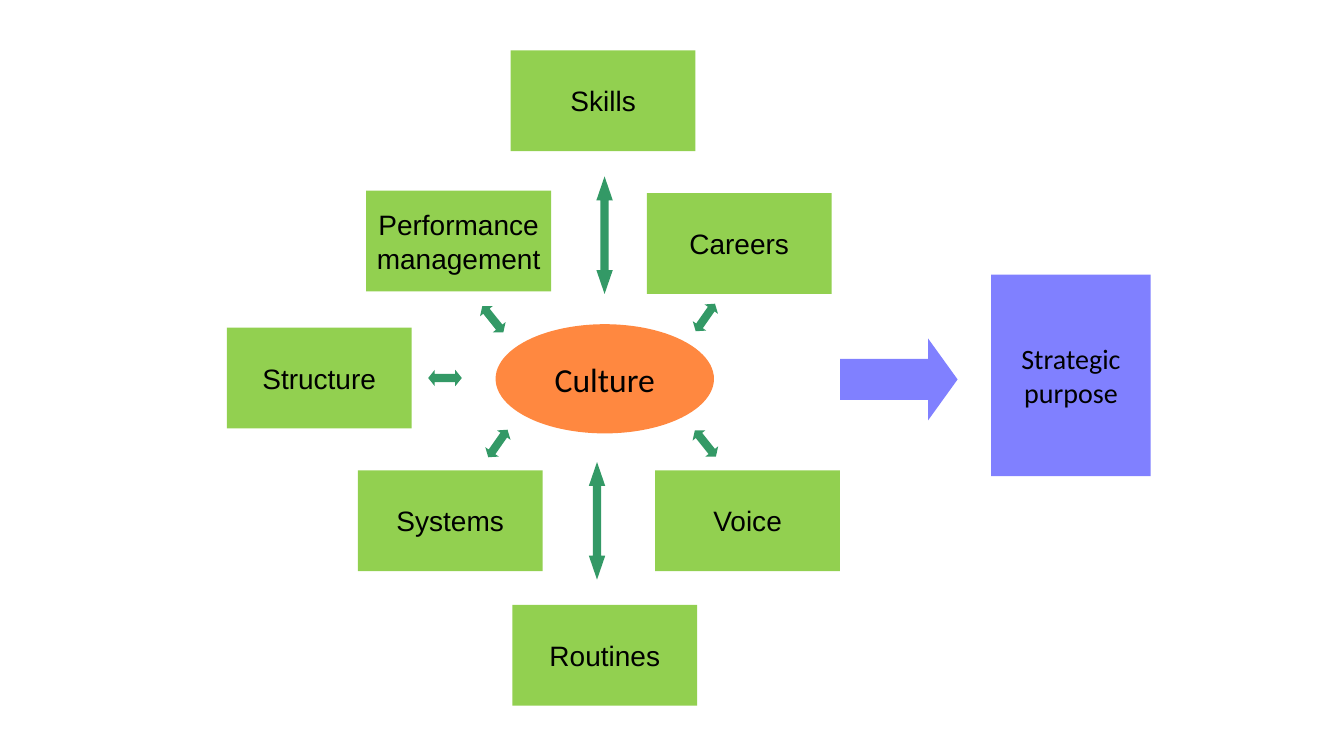
from lxml.etree import SubElement
from pptx import Presentation
from pptx.dml.color import RGBColor
from pptx.enum.shapes import MSO_SHAPE
from pptx.enum.text import MSO_ANCHOR, PP_ALIGN
from pptx.oxml.ns import qn
from pptx.util import Inches, Pt

COLUMNS, ROWS = 160, 90
CELL = Inches(1 / 12)
COLORS = {
    "factor": "92D050",
    "culture": "FF8840",
    "purpose": "8080FF",
    "link": "339966",
    "text": "000000",
}
FACTOR_SIZE = (22, 12)
FACTORS = [
    ("Skills", 60.8, 6),
    ("Careers", 77, 23),
    ("Voice", 78, 56),
    ("Routines", 61, 72),
    ("Systems", 42.6, 56),
    ("Structure", 27, 39),
    ("Performance management", 43.6, 22.7),
]
SHORT_LINKS = [
    (83, 35.8, 35),
    (83, 50.8, 321.2),
    (58.3, 50.8, 35),
    (52, 43, 270),
    (57.7, 36, 321.2),
]
LONG_LINKS = [(71, 21), (70.1, 55)]


def add_figure(shapes, kind, column, row, size, color):
    """Add a flat preset shape placed in grid cells."""
    places = [int(value * CELL) for value in (column, row, *size)]
    figure = shapes.add_shape(kind, *places)
    figure.shadow.inherit = False
    figure.fill.solid()
    figure.fill.fore_color.rgb = RGBColor.from_string(COLORS[color])
    figure.line.fill.background()
    return figure


def add_label(figure, text, font="Arial", size=20, wrap=True):
    """Write centred text in a shape."""
    frame = figure.text_frame
    frame.word_wrap = wrap
    frame.vertical_anchor = MSO_ANCHOR.MIDDLE
    para = frame.paragraphs[0]
    para.alignment = PP_ALIGN.CENTER
    span = para.add_run()
    span.text = text
    span.font.name = font
    span.font.size = Pt(size)
    span.font.color.rgb = RGBColor.from_string(COLORS["text"])


def set_arrow_form(arrow, shaft, head):
    """Set shaft width and head length as shares of the arrow's width."""
    guides = arrow.element.spPr.find(qn("a:prstGeom")).find(qn("a:avLst"))
    guides.clear()
    for name, share in (("adj1", shaft), ("adj2", head)):
        formula = f"val {round(share * 100000)}"
        SubElement(guides, qn("a:gd"), name=name, fmla=formula)


def add_factor(page, text, column, row):
    """Add one of the boxes around the culture."""
    box = add_figure(page.shapes, MSO_SHAPE.RECTANGLE, column, row, FACTOR_SIZE, "factor")
    add_label(box, text)


def add_link(page, column, row, length, head, angle=0):
    """Add a double-headed arrow between the culture and a factor."""
    link = add_figure(page.shapes, MSO_SHAPE.UP_DOWN_ARROW, column, row, (1.95, length), "link")
    set_arrow_form(link, 0.5, head)
    link.rotation = angle


def add_culture(page):
    """Add the ellipse in the middle."""
    culture = add_figure(page.shapes, MSO_SHAPE.OVAL, 59, 38.6, (26, 13), "culture")
    add_label(culture, "Culture", "Calibri", 24, wrap=False)


def add_purpose(page):
    """Add the grouped result box and the arrow that leads to it."""
    shapes = page.shapes.add_group_shape().shapes
    box = add_figure(shapes, MSO_SHAPE.RECTANGLE, 118, 32.7, (19, 24), "purpose")
    add_label(box, "Strategic purpose", "Calibri")
    arrow = add_figure(shapes, MSO_SHAPE.RIGHT_ARROW, 100, 40.3, (14, 9.75), "purpose")
    set_arrow_form(arrow, 0.5, 0.36)


def main():
    """Build the slide and save it."""
    deck = Presentation()
    deck.slide_width = COLUMNS * CELL
    deck.slide_height = ROWS * CELL
    page = deck.slides.add_slide(deck.slide_layouts.get_by_name("Blank"))
    add_culture(page)
    for text, column, row in FACTORS:
        add_factor(page, text, column, row)
    add_purpose(page)
    for column, row, angle in SHORT_LINKS:
        add_link(page, column, row, 4, 0.4, angle)
    for column, row in LONG_LINKS:
        add_link(page, column, row, 14, 1.46)
    deck.save("out.pptx")


if __name__ == "__main__":
    main()
